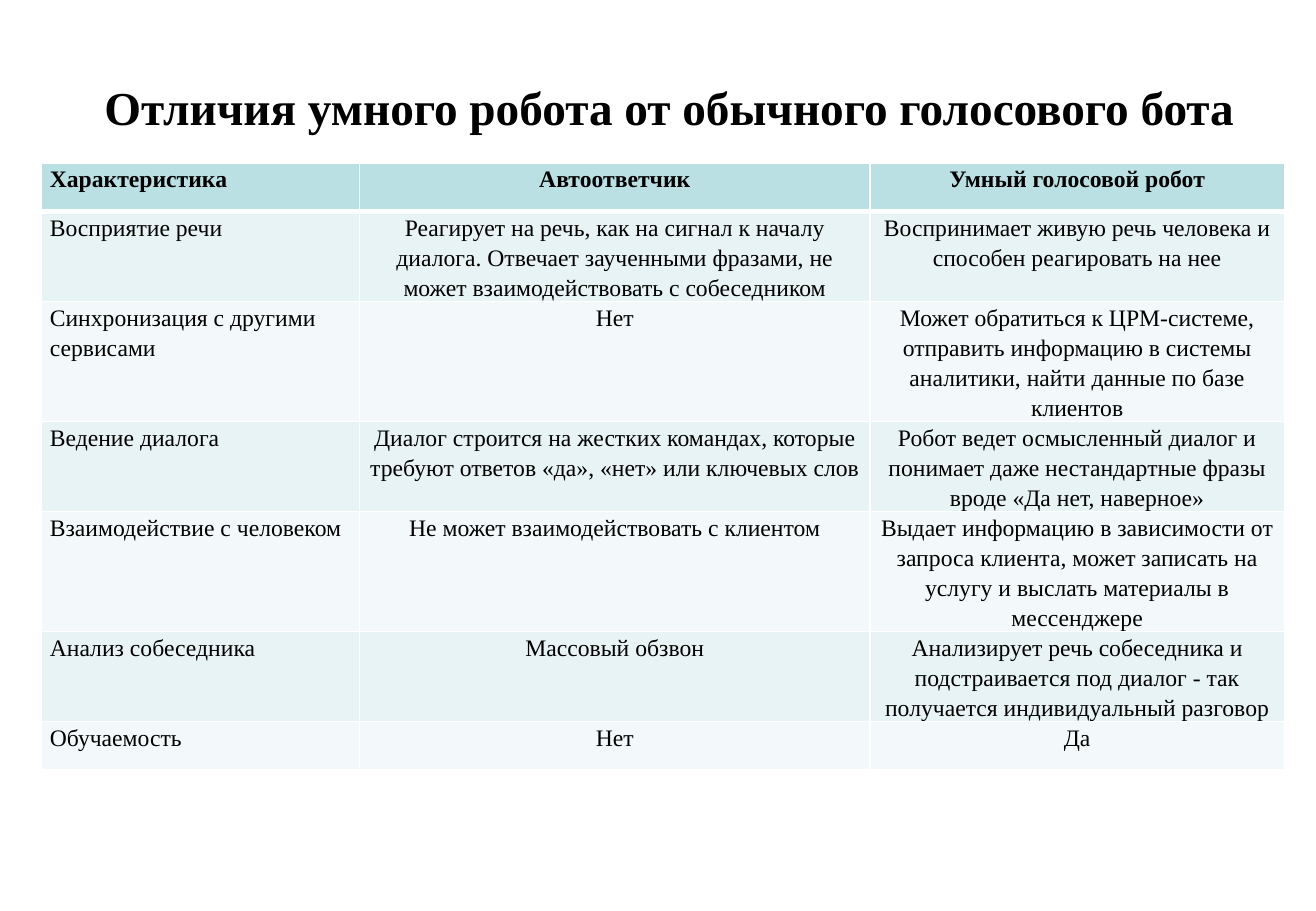
from dataclasses import dataclass

from lxml.etree import SubElement
from pptx import Presentation
from pptx.dml.color import RGBColor
from pptx.enum.text import PP_ALIGN as Align
from pptx.oxml.ns import qn
from pptx.util import Inches, Pt


@dataclass(frozen=True)
class Theme:
    font: str = "Times New Roman"
    title_size: int = 28
    cell_size: int = 14
    ink: str = "000000"
    border: str = "FFFFFF"
    header: str = "BBE0E3"
    bands: tuple[str, str] = ("E7F3F4", "F3F9FA")
    thin: int = 1
    thick: int = 3


@dataclass(frozen=True)
class Comparison:
    feature: str
    machine: str
    robot: str


THEME = Theme()
TITLE = "Отличия умного робота от обычного голосового бота "
COLUMN_WIDTHS = (2.62, 4.2, 3.41)
ROW_HEIGHT = 0.4
COMPARISONS = (
    Comparison("Характеристика", "Автоответчик", "Умный голосовой робот"),
    Comparison(
        "Восприятие речи",
        "Реагирует на речь, как на сигнал к началу диалога. "
        "Отвечает заученными фразами, не может взаимодействовать с собеседником",
        "Воспринимает живую речь человека и способен реагировать на нее",
    ),
    Comparison(
        "Синхронизация с другими сервисами",
        "Нет",
        "Может обратиться к ЦРМ-системе, отправить информацию "
        "в системы аналитики, найти данные по базе клиентов",
    ),
    Comparison(
        "Ведение диалога",
        "Диалог строится на жестких командах, которые требуют ответов "
        "«да», «нет» или ключевых слов",
        "Робот ведет осмысленный диалог и понимает даже нестандартные "
        "фразы вроде «Да нет, наверное»",
    ),
    Comparison(
        "Взаимодействие с человеком",
        "Не может взаимодействовать с клиентом",
        "Выдает информацию в зависимости от запроса клиента, может "
        "записать на услугу и выслать материалы в мессенджере",
    ),
    Comparison(
        "Анализ собеседника",
        "Массовый обзвон",
        "Анализирует речь собеседника и подстраивается под диалог - так "
        "получается индивидуальный разговор",
    ),
    Comparison("Обучаемость", "Нет", "Да"),
)


def write_text(para, text: str, size: int, bold: bool, align: Align) -> None:
    para.alignment = align
    span = para.add_run()
    span.text = text
    span.font.name = THEME.font
    span.font.size = Pt(size)
    span.font.bold = bold
    span.font.color.rgb = RGBColor.from_string(THEME.ink)


def draw_borders(cell, top: int, bottom: int) -> None:
    properties = cell._tc.get_or_add_tcPr()
    widths = {"lnL": THEME.thin, "lnR": THEME.thin, "lnT": top, "lnB": bottom}
    for tag, width in widths.items():
        line = SubElement(properties, qn(f"a:{tag}"), w=str(Pt(width)))
        fill = SubElement(line, qn("a:solidFill"))
        SubElement(fill, qn("a:srgbClr"), val=THEME.border)


def draw_cell(cell, text: str, row: int, column: int) -> None:
    is_header = row == 0
    draw_borders(
        cell,
        top=THEME.thick if row == 1 else THEME.thin,
        bottom=THEME.thick if is_header else THEME.thin,
    )
    cell.fill.solid()
    color = THEME.header if is_header else THEME.bands[(row - 1) % 2]
    cell.fill.fore_color.rgb = RGBColor.from_string(color)
    cell.margin_left = cell.margin_right = Inches(0.07)
    cell.margin_top = cell.margin_bottom = 0
    para = cell.text_frame.paragraphs[0]
    para.line_spacing = 1.15
    align = Align.LEFT if column == 0 else Align.CENTER
    write_text(para, text, THEME.cell_size, is_header, align)


def draw_table(page) -> None:
    table = page.shapes.add_table(
        len(COMPARISONS), len(COLUMN_WIDTHS),
        Inches(0.34), Inches(1.34),
        Inches(sum(COLUMN_WIDTHS)), Inches(ROW_HEIGHT * len(COMPARISONS)),
    ).table
    for column, width in zip(table.columns, COLUMN_WIDTHS):
        column.width = Inches(width)
    for row, item in enumerate(COMPARISONS):
        for column, text in enumerate((item.feature, item.machine, item.robot)):
            draw_cell(table.cell(row, column), text, row, column)


def draw_title(page) -> None:
    box = page.shapes.add_textbox(
        Inches(0.28), Inches(0.55), Inches(10.55), Inches(0.71)
    )
    frame = box.text_frame
    frame.word_wrap = True
    frame.margin_top = Inches(0.09)
    write_text(frame.paragraphs[0], TITLE, THEME.title_size, True, Align.CENTER)


def main() -> None:
    deck = Presentation()
    deck.slide_width = Inches(10.83)
    deck.slide_height = Inches(7.5)
    page = deck.slides.add_slide(deck.slide_layouts[6])
    draw_table(page)
    draw_title(page)
    deck.save("out.pptx")


if __name__ == "__main__":
    main()
